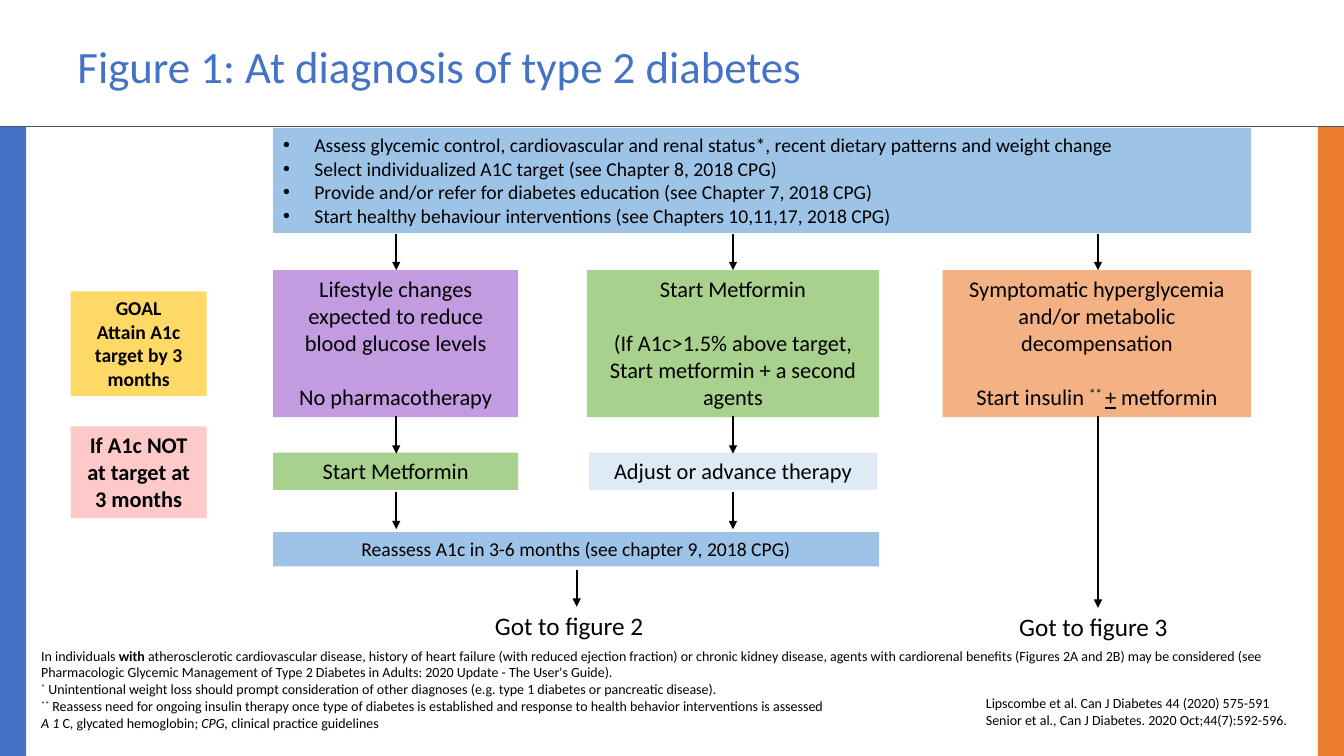
import pptx
import pptx.util
import pptx.dml.color
import pptx.enum.shapes
import pptx.enum.text
import pptx.oxml.ns
import lxml.etree

Inches, Pt = pptx.util.Inches, pptx.util.Pt
RECT = pptx.enum.shapes.MSO_SHAPE.RECTANGLE
LINE = pptx.enum.shapes.MSO_CONNECTOR.STRAIGHT
ALIGN = pptx.enum.text.PP_ALIGN
ANCHOR = pptx.enum.text.MSO_ANCHOR
qn = pptx.oxml.ns.qn
hue = pptx.dml.color.RGBColor.from_string

deck = pptx.Presentation()
deck.slide_width, deck.slide_height = Inches(13.33), Inches(7.5)
slide = deck.slides.add_slide(deck.slide_layouts[6])
shapes = slide.shapes


def block(at, paras, size, fill=None, bold=False, wrap=True, gap=0):
    """Box of text; a run is (text, marks): b bold, i italic, u underline, ^ raised."""
    place = [Inches(n) for n in at]
    if fill:
        box = shapes.add_shape(RECT, *place)
        box.shadow.inherit = False
        box.fill.solid()
        box.fill.fore_color.rgb = hue(fill)
        box.line.fill.background()
    else:
        box = shapes.add_textbox(*place)
    frame = box.text_frame
    frame.word_wrap = wrap
    frame.vertical_anchor = ANCHOR.TOP
    for n, runs in enumerate(paras):
        para = frame.paragraphs[0] if n == 0 else frame.add_paragraph()
        para.alignment = ALIGN.CENTER if fill else ALIGN.LEFT
        if n and gap:
            para.space_before = Pt(gap)
        for text, marks in runs:
            run = para.add_run()
            run.text = text
            font = run.font
            font.name, font.size = "Calibri", Pt(size)
            font.color.rgb = hue("000000")
            font.bold = bold or "b" in marks
            font.italic = "i" in marks
            font.underline = "u" in marks
            if "^" in marks:
                run._r.get_or_add_rPr().set("baseline", "30000")
    return box


def rule(x1, y1, x2, y2, color, width, head=False):
    line = shapes.add_connector(LINE, Inches(x1), Inches(y1), Inches(x2), Inches(y2))
    line.line.color.rgb = hue(color)
    line.line.width = Pt(width)
    if head:
        tail = lxml.etree.SubElement(line.line._get_or_add_ln(), qn("a:tailEnd"))
        tail.set("type", "triangle")
    lxml.etree.SubElement(line._element.spPr, qn("a:effectLst"))


# Side bars and top rule
block((0, 1.26, 0.26, 6.24), [], 14, "4472C4")
block((13.07, 1.25, 0.26, 6.25), [], 14, "ED7D31")
rule(0, 1.25, 13.33, 1.25, "44546A", 0.25)

# Title
title = block((0.67, 0.18, 12.3, 1), [[("Figure 1: At diagnosis of type 2 diabetes", "")]], 32)
title.text_frame.vertical_anchor = ANCHOR.MIDDLE
head = title.text_frame.paragraphs[0]
head.line_spacing = 0.9
head.runs[0].font.color.rgb = hue("4472C4")

# First steps, bulleted
steps = [
    "Assess glycemic control, cardiovascular and renal status*, recent dietary patterns and weight change",
    "Select individualized A1C target (see Chapter 8, 2018 CPG)",
    "Provide and/or refer for diabetes education (see Chapter 7, 2018 CPG)",
    "Start healthy behaviour interventions (see Chapters 10,11,17, 2018 CPG)",
]
start = block((2.71, 1.27, 9.7, 1.04), [[(step, "")] for step in steps], 14, "9DC3E6")
for para in start.text_frame.paragraphs:
    para.alignment = ALIGN.LEFT
    props = para._p.get_or_add_pPr()
    props.set("marL", str(Inches(0.31)))
    props.set("indent", str(-Inches(0.31)))
    lxml.etree.SubElement(props, qn("a:buFont")).set("typeface", "Arial")
    lxml.etree.SubElement(props, qn("a:buChar")).set("char", "•")

# Goals at the left
block((0.7, 2.89, 1.35, 1.04),
      [[("GOAL", "")], [("Attain A1c target by 3 months", "")]], 14, "FFD966", bold=True)
block((0.7, 4.23, 1.35, 0.91),
      [[("If A1c NOT at target at 3 months", "")]], 16, "FFC9C9", bold=True)

# Three paths
paths = [
    (2.71, 2.43, "C39BE1", "Lifestyle changes expected to reduce blood glucose levels",
     [("No pharmacotherapy", "")]),
    (5.82, 2.9, "A9D18E", "Start Metformin",
     [("(If A1c>1.5% above target, Start metformin + a second agents", "")]),
    (9.35, 3.06, "F4B183", "Symptomatic hyperglycemia and/or metabolic decompensation",
     [("Start insulin ", ""), ("** ", "^"), ("+", "u"), (" metformin", "")]),
]
for left, width, fill, top, last in paths:
    block((left, 2.68, width, 1.46), [[(top, "")], last], 16, fill, gap=19.5)

# Follow-up
block((2.71, 4.49, 2.43, 0.37), [[("Start Metformin", "")]], 16, "A9D18E")
block((5.84, 4.49, 2.86, 0.37), [[("Adjust or advance therapy", "")]], 16, "DEEBF7")
block((2.71, 5.28, 6.01, 0.34),
      [[("Reassess A1c in 3-6 months (see chapter 9, 2018 CPG)", "")]], 14, "9DC3E6")

# Arrows
drops = [(x, y1, y2) for x in (3.93, 7.27)
         for y1, y2 in ((2.32, 2.68), (4.13, 4.5), (4.88, 5.25))]
drops += [(10.89, 2.32, 2.68), (10.89, 4.13, 6.03), (5.72, 5.65, 6.02)]
for x, y1, y2 in drops:
    rule(x, y1, x, y2, "000000", 1.5, head=True)

# Next figures
for left, top, num in ((4.81, 6.01, 2), (10.01, 6.02, 3)):
    block((left, top, 1.69, 0.4), [[(f"Got to figure {num}", "")]], 18, wrap=False)

# Footnotes and sources
notes = [
    [("In individuals ", ""), ("with ", "b"),
     ("atherosclerotic cardiovascular disease, history of heart failure (with reduced ejection "
      "fraction) or chronic kidney disease, agents with cardiorenal benefits (Figures 2A and 2B) "
      "may be considered (see Pharmacologic Glycemic Management of Type 2 Diabetes in Adults: "
      "2020 Update - The User's Guide).", "")],
    [("*", "^"), (" Unintentional weight loss should prompt consideration of other diagnoses "
                  "(e.g. type 1 diabetes or pancreatic disease).", "")],
    [("**", "^"), (" Reassess need for ongoing insulin therapy once type of diabetes is established "
                   "and response to health behavior interventions is assessed", "")],
    [("A 1 ", "i"), ("C, glycated hemoglobin; ", ""), ("CPG, ", "i"),
     ("clinical practice guidelines", "")],
]
block((0.31, 6.37, 12.61, 0.94), notes, 10)
block((9.68, 6.84, 3.28, 0.44),
      [[("Lipscombe et al. Can J Diabetes 44 (2020) 575-591", "")],
       [("Senior et al., Can J Diabetes. 2020 Oct;44(7):592-596.", "")]], 10, wrap=False)

deck.save("out.pptx")
